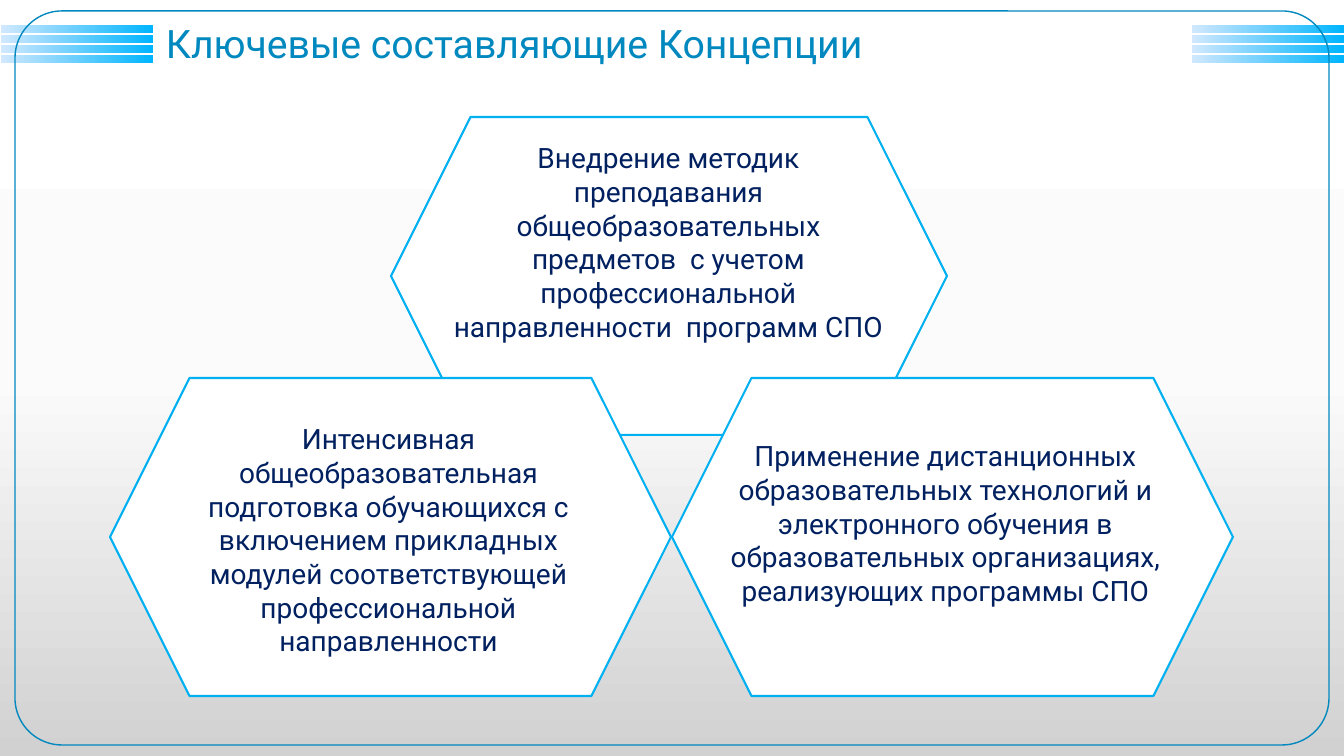
from copy import deepcopy

from pptx import Presentation
from pptx import util as u
from pptx.dml.color import RGBColor
from pptx.enum import shapes, text
from pptx.oxml.ns import qn

PX = 12192000 / 1344
COLORS = {
    "title": "0088BF", "body": "002060", "outline": "00B0F0", "white": "FFFFFF",
    "bar_start": "D1E8FF", "bar_end": "00B5FF",
    "back_middle": "FBFBFB", "back_end": "D1D1D1",
}


def rgb(name):
    return RGBColor.from_string(COLORS[name])


def add_box(kind, area, line=None, width=1):
    box = page.shapes.add_shape(kind, *[u.Emu(round(n * PX)) for n in area])
    box.shadow.inherit = False
    if line:
        box.line.color.rgb = rgb(line)
        box.line.width = u.Pt(width)
    else:
        box.line.fill.background()
    return box


deck = Presentation()
deck.slide_width = u.Emu(round(1344 * PX))
deck.slide_height = u.Emu(round(756 * PX))
page = deck.slides.add_slide(deck.slide_layouts[6])

backdrop = page.background.fill
backdrop.gradient()
backdrop.gradient_angle = 270
stop_list = page.element.find(".//" + qn("a:gsLst"))
stop_list.append(deepcopy(stop_list[-1]))
backdrop_stops = [(0, "white"), (0.5, "back_middle"), (1, "back_end")]
for stop, (position, color) in zip(backdrop.gradient_stops, backdrop_stops):
    stop.position = position
    stop.color.rgb = rgb(color)

for left in (1, 1192):
    for row in range(4):
        bar = add_box(shapes.MSO_SHAPE.RECTANGLE, (left, 25 + 10 * row, 152, 8))
        bar.fill.gradient()
        bar.fill.gradient_angle = 0
        for stop, position, color in zip(bar.fill.gradient_stops, (0, 1), ("bar_start", "bar_end")):
            stop.position = position
            stop.color.rgb = rgb(color)

frame = add_box(shapes.MSO_SHAPE.ROUNDED_RECTANGLE, (15, 11, 1314, 734), "title")
frame.adjustments[0] = 0.064
frame.fill.background()

for area in [(391, 117, 556, 318), (672, 378, 561, 318), (110, 378, 561, 318)]:
    hexagon = add_box(shapes.MSO_SHAPE.HEXAGON, area, "outline", 1.5)
    hexagon.fill.solid()
    hexagon.fill.fore_color.rgb = rgb("white")

title_format = {
    "frame": {"word_wrap": True, "vertical_anchor": text.MSO_ANCHOR.MIDDLE},
    "para": {"line_spacing": 0.9},
    "font": {"name": "Roboto", "size": u.Pt(28)},
    "color": "title",
}
body_format = {
    "frame": {"word_wrap": True, "auto_size": text.MSO_AUTO_SIZE.SHAPE_TO_FIT_TEXT},
    "para": {"alignment": text.PP_ALIGN.CENTER},
    "font": {"name": "Roboto", "size": u.Pt(20)},
    "color": "body",
}
labels = [
    ((156, 15, 913, 62), "Ключевые составляющие Концепции", title_format),
    ((438, 136, 461, 214),
     "Внедрение методик преподавания общеобразовательных предметов  с учетом "
     "профессиональной направленности  программ СПО", body_format),
    ((680, 434, 531, 179),
     "Применение дистанционных образовательных технологий и электронного обучения "
     "в образовательных организациях, реализующих программы СПО", body_format),
    ((156, 417, 465, 248),
     "Интенсивная общеобразовательная подготовка обучающихся с включением прикладных "
     "модулей соответствующей профессиональной направленности", body_format),
]
for area, wording, style in labels:
    box = page.shapes.add_textbox(*[u.Emu(round(n * PX)) for n in area])
    para = box.text_frame.paragraphs[0]
    span = para.add_run()
    span.text = wording
    span.font.color.rgb = rgb(style["color"])
    for target, part in [(box.text_frame, "frame"), (para, "para"), (span.font, "font")]:
        for name, value in style[part].items():
            setattr(target, name, value)

deck.save("out.pptx")
